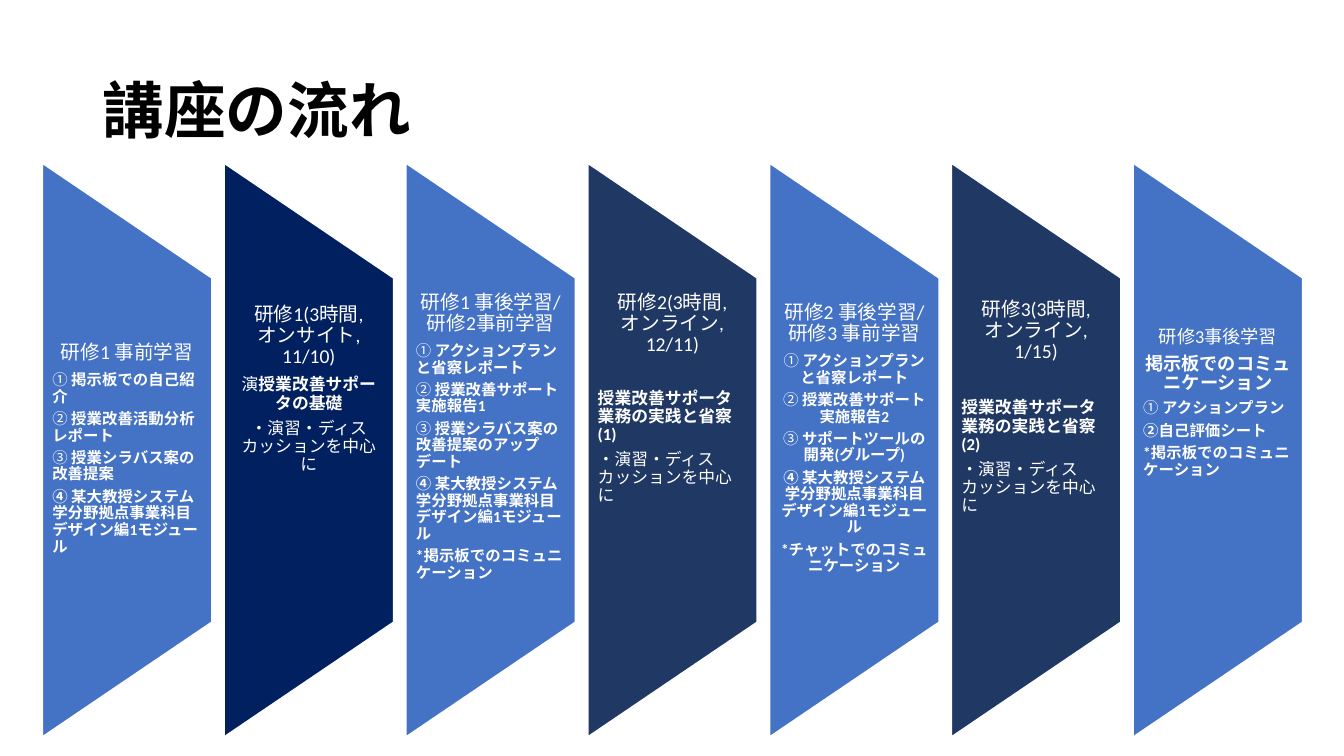
from lxml.etree import SubElement
from pptx import Presentation
from pptx.dml.color import RGBColor
from pptx.enum.shapes import MSO_SHAPE as Geo
from pptx.enum.text import MSO_ANCHOR as Anchor, PP_ALIGN as Align
from pptx.oxml.ns import qn
from pptx.util import Inches, Pt

WHITE = RGBColor(0xFF, 0xFF, 0xFF)
BLACK = RGBColor(0, 0, 0)
BLUE = RGBColor(0x44, 0x72, 0xC4)
NAVY = RGBColor(0x00, 0x20, 0x60)
DUSK = RGBColor(0x20, 0x38, 0x64)
LATIN = "Calibri"
ASIAN = "Noto Sans CJK JP"

LEFT, TOP, WIDE, TALL = 0.42, 1.62, 1.68, 5.69
STEP = 10.82 / 6
BODY_TOP, BODY_TALL = 2.75, 3.41
MODULE = "某大教授システム学分野拠点事業科目デザイン編1モジュール"
DRILL = "・演習・ディスカッションを中心に"
BOARD = "掲示板でのコミュニケーション"


def head(text, size=14):
    """Describe a centred card heading."""
    return size, Align.CENTER, 0, [(text, False)]


def item(mark, text, size=11, align=Align.LEFT, gap=0):
    """Describe a line with a plain mark and bold text."""
    runs = [(mark, False)] if mark else []
    return size, align, gap, runs + [(text, True)]


def plain(text, align=Align.LEFT):
    """Describe a line of plain text."""
    return 12, align, 0, [(text, False)]


def mid(mark, text, size=11):
    """Describe a centred item."""
    return item(mark, text, size, Align.CENTER)


CARDS = [
    (BLUE, 0.65, [
        head("研修1 事前学習"),
        item("① ", "掲示板での自己紹介"),
        item("② ", "授業改善活動分析レポート"),
        item("③ ", "授業シラバス案の改善提案"),
        item("", "④ " + MODULE),
    ]),
    (NAVY, 0.27, [
        head("研修1(3時間,\vオンサイト, 11/10)"),
        mid("演", "授業改善サポータの基礎", 12),
        plain(DRILL, Align.CENTER),
    ]),
    (BLUE, 0.15, [
        head("研修1 事後学習/ 研修2事前学習"),
        item("① ", "アクションプランと省察レポート"),
        item("② ", "授業改善サポート実施報告1"),
        item("③ ", "授業シラバス案の改善提案のアップデート"),
        item("", "④ " + MODULE),
        item("", "*" + BOARD),
    ]),
    (DUSK, 0.15, [
        head("研修2(3時間,\vオンライン, 12/11)"),
        item("", "授業改善サポータ業務の実践と省察(1)", 12, gap=18),
        plain(DRILL),
    ]),
    (BLUE, 0.25, [
        head("研修2 事後学習/ 研修3 事前学習"),
        mid("① ", "アクションプランと省察レポート"),
        mid("② ", "授業改善サポート実施報告2"),
        mid("③ ", "サポートツールの開発(グループ)"),
        mid("", "④ " + MODULE),
        mid("", "*チャットでのコミュニケーション"),
    ]),
    (DUSK, 0.22, [
        head("研修3(3時間,\vオンライン, 1/15)"),
        item("", "授業改善サポータ業務の実践と省察(2)", 12, gap=20),
        plain(DRILL),
    ]),
    (BLUE, 0.5, [
        head("研修3事後学習", 13),
        mid("", BOARD, 13),
        item("① ", "アクションプラン"),
        item("", "②自己評価シート"),
        item("", "*" + BOARD),
    ]),
]


def add_run(para, text, size, color, bold):
    """Add one styled run, breaking lines at vertical tabs."""
    for i, part in enumerate(text.split("\v")):
        if i:
            para.add_line_break()
        run = para.add_run()
        run.text = part
        font = run.font
        font.name, font.size, font.bold = LATIN, Pt(size), bold
        font.color.rgb = color
        SubElement(font._element, qn("a:ea")).set("typeface", ASIAN)


def add_box(slide, x, y, w, h, lines, color, anchor, inset=0):
    """Add a text box with the given lines."""
    frame = slide.shapes.add_textbox(
        Inches(x), Inches(y), Inches(w), Inches(h)).text_frame
    frame.word_wrap = True
    frame.vertical_anchor = anchor
    frame.margin_left = frame.margin_right = Inches(0.1)
    frame.margin_top, frame.margin_bottom = Inches(inset), 0
    for i, (size, align, gap, runs) in enumerate(lines):
        para = frame.add_paragraph() if i else frame.paragraphs[0]
        para.alignment = align
        para.line_spacing = 0.9
        para.space_before = Pt(gap)
        para.space_after = Pt(round(size * 0.4))
        for text, bold in runs:
            add_run(para, text, size, color, bold)


def add_card(slide, x, fill, inset, lines):
    """Add a sideways trapezoid and its text."""
    shift = (TALL - WIDE) / 2
    shape = slide.shapes.add_shape(
        Geo.FLOWCHART_MANUAL_OPERATION, Inches(x - shift),
        Inches(TOP + shift), Inches(TALL), Inches(WIDE))
    shape.rotation = 270
    shape.shadow.inherit = False
    shape.fill.solid()
    shape.fill.fore_color.rgb = fill
    shape.line.color.rgb = WHITE
    shape.line.width = Pt(1)
    add_box(slide, x, BODY_TOP, WIDE, BODY_TALL, lines, WHITE,
            Anchor.TOP, inset)


def main():
    """Build and save the slide."""
    deck = Presentation()
    deck.slide_width, deck.slide_height = Inches(13.33), Inches(7.5)
    slide = deck.slides.add_slide(deck.slide_layouts[6])
    title = [item("", "講座の流れ", 44)]
    add_box(slide, 0.92, 0.4, 11.5, 1.45, title, BLACK, Anchor.MIDDLE)
    for i, (fill, inset, lines) in enumerate(CARDS):
        add_card(slide, LEFT + i * STEP, fill, inset, lines)
    deck.save("out.pptx")


if __name__ == "__main__":
    main()
